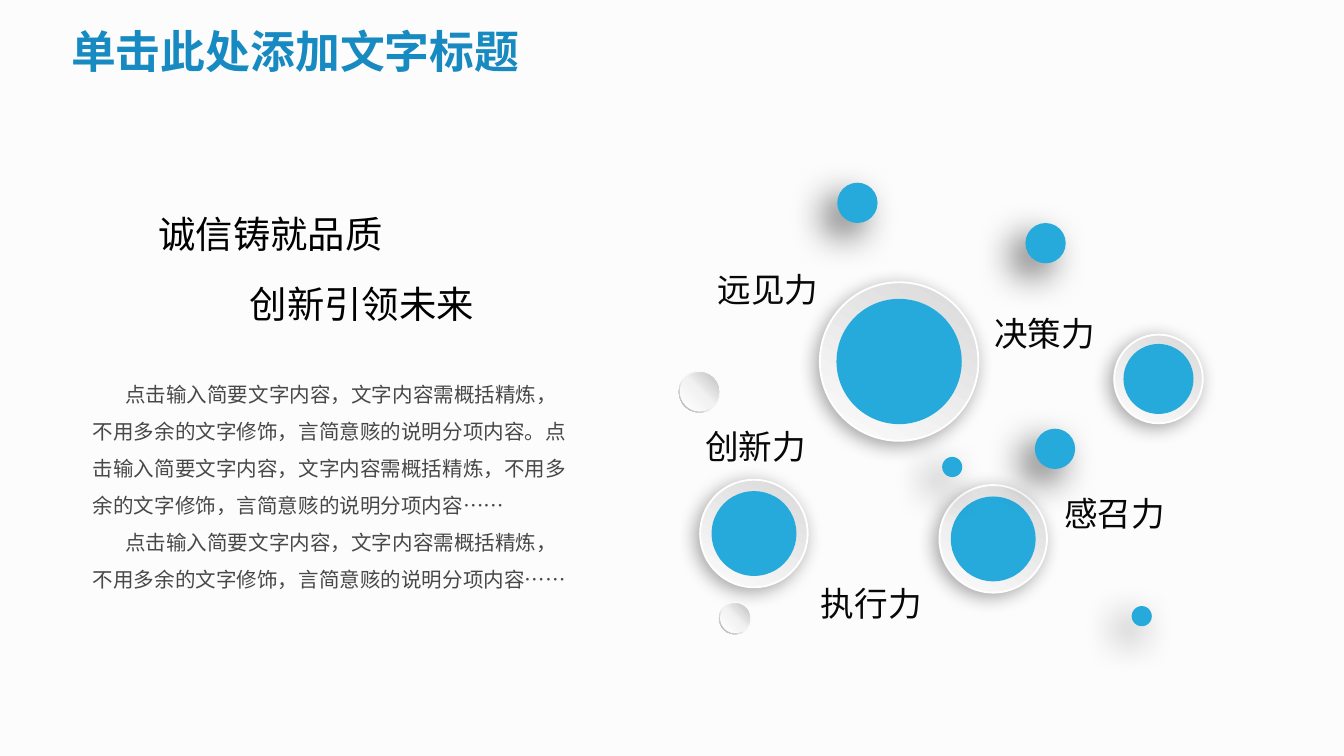
from lxml import etree
from pptx import Presentation
from pptx.dml.color import RGBColor
from pptx.enum.shapes import MSO_SHAPE
from pptx.enum.text import MSO_ANCHOR, MSO_AUTO_SIZE, PP_ALIGN
from pptx.oxml.ns import qn
from pptx.util import Inches, Pt

OVAL, DONUT = MSO_SHAPE.OVAL, MSO_SHAPE.DONUT
TOP, LEFT, NO_FIT = MSO_ANCHOR.TOP, PP_ALIGN.LEFT, MSO_AUTO_SIZE.NONE
FONT = "Noto Sans CJK SC"
COLORS = {"bg": "FCFCFC", "title": "178AC1", "blue": "26AADB", "slogan": "000000",
          "label": "080808", "body": "484848"}
RING = [(0, "D9D9D9"), (100, "FCFCFC")]
RING_LINE = [(0, "D9D9D9"), (50, "FFFFFF"), (100, "FFFFFF")]
RIM = [(0, "FFFFFF"), (55, "F2F2F2"), (100, "A6A6A6")]
PEARL = [(0, "FFFFFF"), (51, "F2F2F2"), (100, "BFBFBF")]
RING_SHADOW, DOT_SHADOW = (34, 10, 3, 136), (60, 20, 10, 135)


def add_circle(x, y, d, fill, angle=0, kind=OVAL, line=None, shadow=None):
    sp = s.shapes.add_shape(kind, Inches(x), Inches(y), Inches(d), Inches(d))
    sp.shadow.inherit = False
    sp.line.fill.background()
    sp.fill.solid()
    ln = sp.line._ln
    if line:
        sp.line.width = Pt(1)
        sp.line.fill.solid()
    if isinstance(fill, str):
        sp.fill.fore_color.rgb = RGBColor.from_string(fill)
    for parent, stops in ((sp._element.spPr, fill), (ln, line)):
        if not isinstance(stops, list):
            continue
        grad = etree.Element(qn("a:gradFill"), rotWithShape="1")
        gs_lst = etree.SubElement(grad, qn("a:gsLst"))
        for pos, color in stops:
            gs = etree.SubElement(gs_lst, qn("a:gs"), pos=str(pos * 1000))
            etree.SubElement(gs, qn("a:srgbClr"), val=color)
        etree.SubElement(grad, qn("a:lin"), ang=str(angle * 60000), scaled="0")
        parent.replace(parent.find(qn("a:solidFill")), grad)
    if shadow:
        alpha, blur, dist, direction = shadow
        effects = sp._element.spPr.find(qn("a:effectLst"))
        outer = etree.SubElement(effects, qn("a:outerShdw"), blurRad=str(Pt(blur)),
                                 dist=str(Pt(dist)), dir=str(direction * 60000),
                                 algn="ctr", rotWithShape="0")
        clr = etree.SubElement(outer, qn("a:srgbClr"), val="000000")
        etree.SubElement(clr, qn("a:alpha"), val=str(alpha * 1000))
    return sp


def add_text(sp, box, lines, size, color, bold=False, wrap=False, spacing=1.0, indent=0):
    sp.left, sp.top, sp.width, sp.height = [Inches(v) for v in box]
    tf = sp.text_frame
    tf.word_wrap = wrap
    tf.auto_size = NO_FIT
    tf.vertical_anchor = TOP
    for i, line in enumerate(lines):
        p = tf.add_paragraph() if i else tf.paragraphs[0]
        p.alignment = LEFT
        p.line_spacing = spacing
        p.space_before = Pt(0)
        if indent:
            p._p.get_or_add_pPr().set("indent", str(Inches(indent)))
        r = p.add_run()
        r.text = line
        r.font.name = FONT
        r.font.size = Pt(size)
        r.font.bold = bold
        r.font.color.rgb = RGBColor.from_string(COLORS[color])
        ea = etree.SubElement(r._r.get_or_add_rPr(), qn("a:ea"))
        ea.set("typeface", FONT)


prs = Presentation()
prs.slide_width = Inches(10)
prs.slide_height = prs.slide_width * 9 // 16
s = prs.slides.add_slide(prs.slide_layouts[1])
s.background.fill.solid()
s.background.fill.fore_color.rgb = RGBColor.from_string(COLORS["bg"])

add_text(s.shapes.title, (0.43, 0.13, 3.57, 0.5), ["单击此处添加文字标题"],
         24, "title", bold=True)

for x, y, d in [(6.1, 2.1, 1.18), (5.21, 3.57, 0.8), (6.99, 3.61, 0.8), (8.29, 2.49, 0.66)]:
    add_circle(x, y, d, RING, 120, line=RING_LINE, shadow=RING_SHADOW)
    disc = d * 0.79
    gap = (d - disc) / 2
    add_circle(x + gap, y + gap, disc, COLORS["blue"])

for x, y, slogan in [(1.08, 1.52, "诚信铸就品质"), (1.76, 2.04, "创新引领未来")]:
    add_text(s.shapes.add_textbox(0, 0, 0, 0), (x, y, 1.88, 0.44), [slogan], 20, "slogan")

for x, y, label in [(5.24, 1.95, "远见力"), (6.01, 4.29, "执行力"), (7.82, 3.62, "感召力"),
                    (7.3, 2.28, "决策力"), (5.15, 3.12, "创新力")]:
    add_text(s.shapes.add_textbox(0, 0, 0, 0), (x, y, 0.96, 0.4), [label], 18, "label")

for x, y, d in [(5.35, 4.48, 0.24), (5.05, 2.76, 0.31)]:
    rim = add_circle(x, y, d, RIM, 135, kind=DONUT)
    rim.adjustments[0] = 0.05
    add_circle(x + 0.01, y + 0.01, d - 0.02, PEARL, 315)

for x, y, d in [(7.7, 3.19, 0.3), (7.63, 1.66, 0.3), (8.42, 4.51, 0.15),
                (6.23, 1.36, 0.3), (7.01, 3.4, 0.15)]:
    add_circle(x, y, d, COLORS["blue"], shadow=DOT_SHADOW)

sentence = "点击输入简要文字内容，文字内容需概括精炼，不用多余的文字修饰，言简意赅的说明分项内容"
body = s.placeholders[1]
add_text(body, (0.59, 2.7, 3.78, 2.04), [sentence + "。" + sentence + "……", sentence + "……"],
         11, "body", wrap=True, spacing=1.5, indent=0.24)
for p in body.text_frame.paragraphs:
    pPr = p._p.get_or_add_pPr()
    pPr.set("marL", "0")
    etree.SubElement(pPr, qn("a:buNone"))

prs.save("out.pptx")
